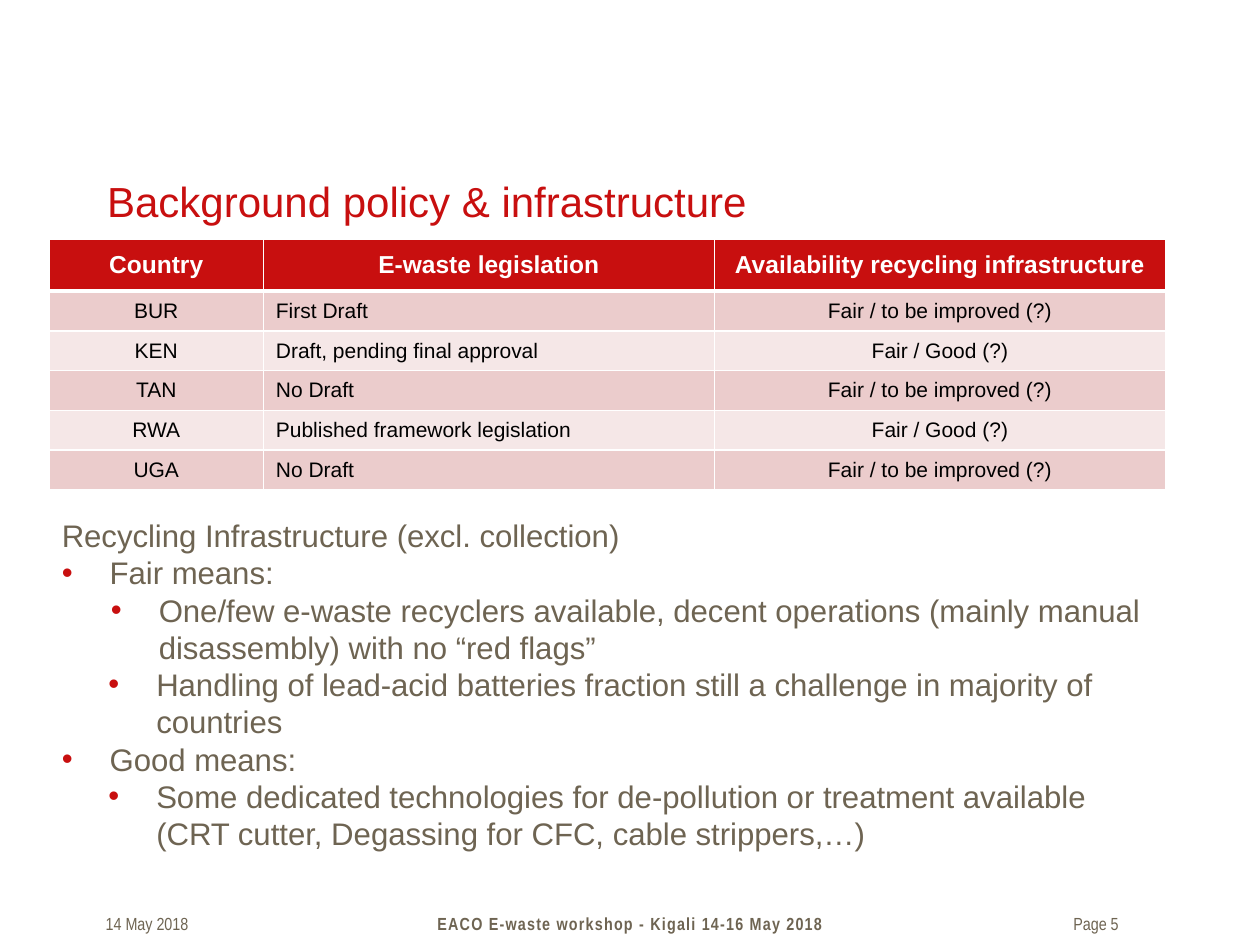
from lxml import etree
from pptx import Presentation
from pptx.dml.color import RGBColor
from pptx.enum.text import MSO_ANCHOR, MSO_AUTO_SIZE, PP_ALIGN
from pptx.oxml.ns import qn
from pptx.util import Inches, Pt

LEFT, CENTER = PP_ALIGN.LEFT, PP_ALIGN.CENTER
TOP, MIDDLE = MSO_ANCHOR.TOP, MSO_ANCHOR.MIDDLE
NO_AUTOFIT = MSO_AUTO_SIZE.NONE

RED, BROWN, WHITE, BLACK = "C80F0F", "6E6452", "FFFFFF", "000000"
BANDS = ["EBCCCC", "F5E7E7"]

HEADERS = ["Country", "E-waste legislation", "Availability recycling infrastructure"]
COUNTRIES = [
    ["BUR", "First Draft", "Fair / to be improved (?)"],
    ["KEN", "Draft, pending final approval", "Fair / Good (?)"],
    ["TAN", "No Draft", "Fair / to be improved (?)"],
    ["RWA", "Published framework legislation", "Fair / Good (?)"],
    ["UGA", "No Draft", "Fair / to be improved (?)"],
]
# Level, text indent in inches (None for no bullet), text
EXPLANATION = [
    (0, None, "Recycling Infrastructure (excl. collection)"),
    (0, 0.38, "Fair means:"),
    (1, 0.77, "One/few e-waste recyclers available, decent operations "
              "(mainly manual disassembly) with no “red flags”"),
    (1, 0.75, "Handling of lead-acid batteries fraction still a challenge "
              "in majority of countries"),
    (0, 0.38, "Good means:"),
    (1, 0.75, "Some dedicated technologies for de-pollution or treatment available "
              "(CRT cutter, Degassing for CFC, cable strippers,…)"),
]


def color(hex_value):
    return RGBColor.from_string(hex_value)


def place(shape, box):
    shape.left, shape.top, shape.width, shape.height = [Inches(v) for v in box]


def prepare_frame(frame, anchor=TOP):
    frame.word_wrap = True
    frame.auto_size = NO_AUTOFIT
    frame.vertical_anchor = anchor


def add_run(paragraph, text, size, hex_value, font="Arial", bold=False):
    run = paragraph.add_run()
    run.text = text
    run.font.name = font
    run.font.size = Pt(size)
    run.font.bold = bold
    run.font.color.rgb = color(hex_value)
    return run


def set_bullet(paragraph, indent):
    properties = paragraph._p.get_or_add_pPr()
    properties.set("marL", str(Inches(indent or 0)))
    properties.set("indent", str(Inches(-0.38 if indent else 0)))
    if indent is None:
        etree.SubElement(properties, qn("a:buNone"))
        return
    bullet_color = etree.SubElement(properties, qn("a:buClr"))
    etree.SubElement(bullet_color, qn("a:srgbClr")).set("val", RED)
    etree.SubElement(properties, qn("a:buFont")).set("typeface", "Arial")
    etree.SubElement(properties, qn("a:buChar")).set("char", "•")


def set_borders(cell, top, bottom):
    properties = cell._tc.get_or_add_tcPr()
    for side, width in (("L", 1), ("R", 1), ("T", top), ("B", bottom)):
        line = etree.SubElement(properties, qn(f"a:ln{side}"))
        line.set("w", str(Pt(width)))
        fill = etree.SubElement(line, qn("a:solidFill"))
        etree.SubElement(fill, qn("a:srgbClr")).set("val", WHITE)


def build_title(slide, box):
    title = slide.shapes.title
    place(title, box)
    frame = title.text_frame
    prepare_frame(frame)
    frame.margin_top = Inches(0.09)
    paragraph = frame.paragraphs[0]
    paragraph.alignment = LEFT
    add_run(paragraph, "Background policy & infrastructure", 24, RED)


def build_table(slide, box):
    rows = [HEADERS] + COUNTRIES
    left, top, width, height = box
    header_height, country_width = 0.41, 1.7
    table = slide.shapes.add_table(
        len(rows), len(HEADERS), *[Inches(v) for v in box]).table
    for index, column in enumerate(table.columns):
        column.width = Inches((width - country_width) / 2 if index else country_width)
    for index, row in enumerate(table.rows):
        row.height = Inches(
            (height - header_height) / len(COUNTRIES) if index else header_height)

    for row_index, texts in enumerate(rows):
        header = row_index == 0
        for column_index, text in enumerate(texts):
            cell = table.cell(row_index, column_index)
            cell.vertical_anchor = MIDDLE
            set_borders(cell, 3 if row_index == 1 else 1, 3 if header else 1)
            cell.fill.solid()
            cell.fill.fore_color.rgb = color(RED if header else BANDS[(row_index - 1) % 2])
            paragraph = cell.text_frame.paragraphs[0]
            paragraph.alignment = LEFT if column_index == 1 and not header else CENTER
            add_run(paragraph, text, 14 if header else 12,
                    WHITE if header else BLACK, bold=header)


def build_explanation(slide, box):
    body = slide.placeholders[1]
    place(body, box)
    frame = body.text_frame
    prepare_frame(frame)
    for index, (level, indent, text) in enumerate(EXPLANATION):
        paragraph = frame.add_paragraph() if index else frame.paragraphs[0]
        set_bullet(paragraph, indent)
        paragraph.level = level
        paragraph.alignment = LEFT
        paragraph.space_before = paragraph.space_after = Pt(0)
        paragraph.line_spacing = Pt(21.3)
        add_run(paragraph, text, 17.8, BROWN)


def build_footer(slide, top, height):
    # Left, width, alignment, bold, letter spacing in hundredths of a point, text
    parts = [
        (0.74, 1.42, LEFT, False, 0, "14 May 2018"),
        (3.13, 3.74, CENTER, True, 70, "EACO E-waste workshop - Kigali 14-16 May 2018"),
        (8.42, 1.01, LEFT, False, 0, "Page 5"),
    ]
    for left, width, alignment, bold, spacing, text in parts:
        text_box = slide.shapes.add_textbox(
            Inches(left), Inches(top), Inches(width), Inches(height))
        prepare_frame(text_box.text_frame)
        paragraph = text_box.text_frame.paragraphs[0]
        paragraph.alignment = alignment
        run = add_run(paragraph, text, 10, BROWN, "Arial Narrow", bold)
        if spacing:
            run.font._element.set("spc", str(spacing))


def main():
    presentation = Presentation()
    presentation.slide_width = Inches(10)
    presentation.slide_height = Inches(7.5)
    slide = presentation.slides.add_slide(presentation.slide_layouts[1])
    slide.background.fill.solid()
    slide.background.fill.fore_color.rgb = color(WHITE)

    build_title(slide, (0.75, 1.3, 8.5, 0.68))
    build_explanation(slide, (0.39, 4.05, 8.86, 2.8))
    build_table(slide, (0.39, 1.9, 8.86, 1.99))
    build_footer(slide, 7.2, 0.27)
    presentation.save("out.pptx")


if __name__ == "__main__":
    main()
